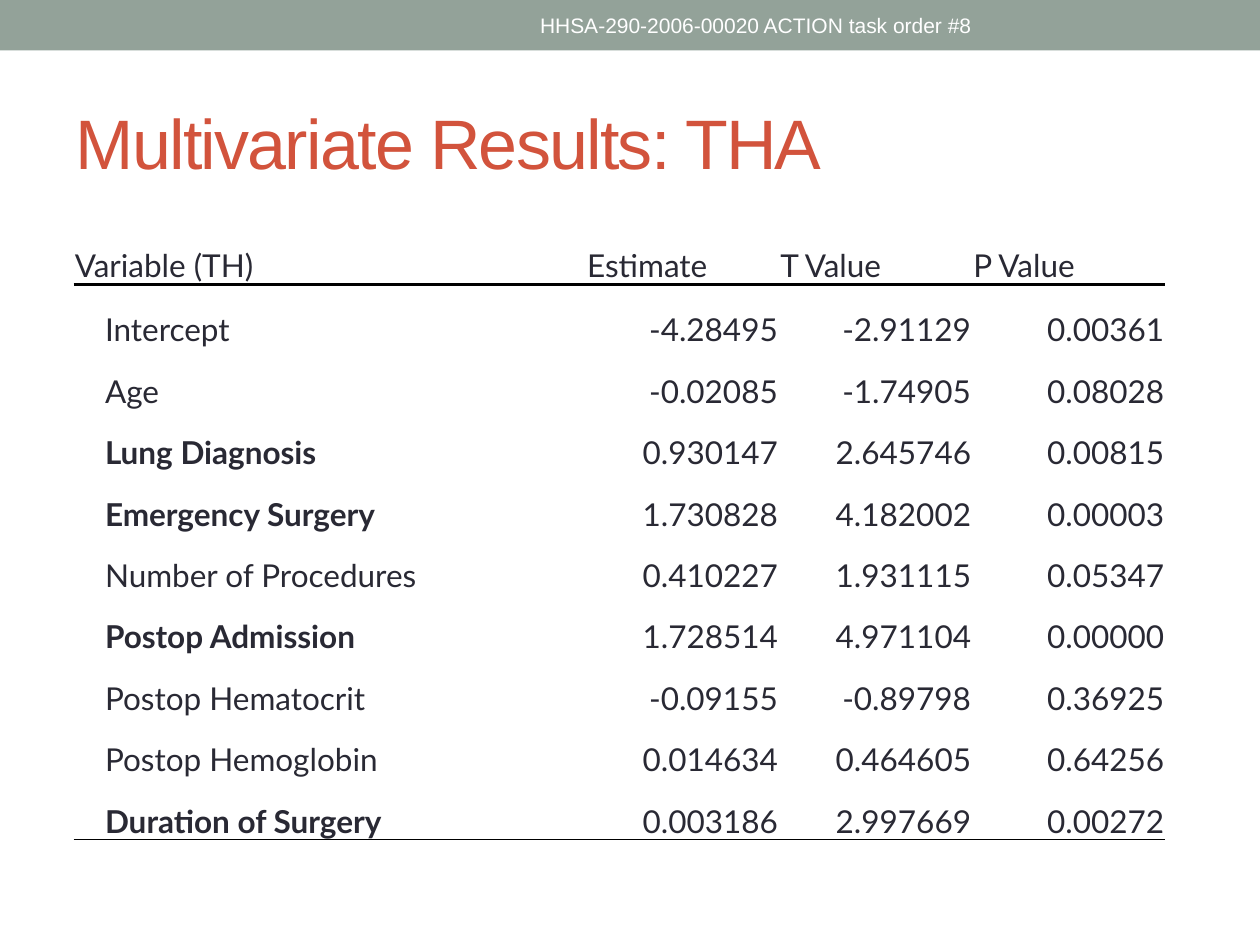
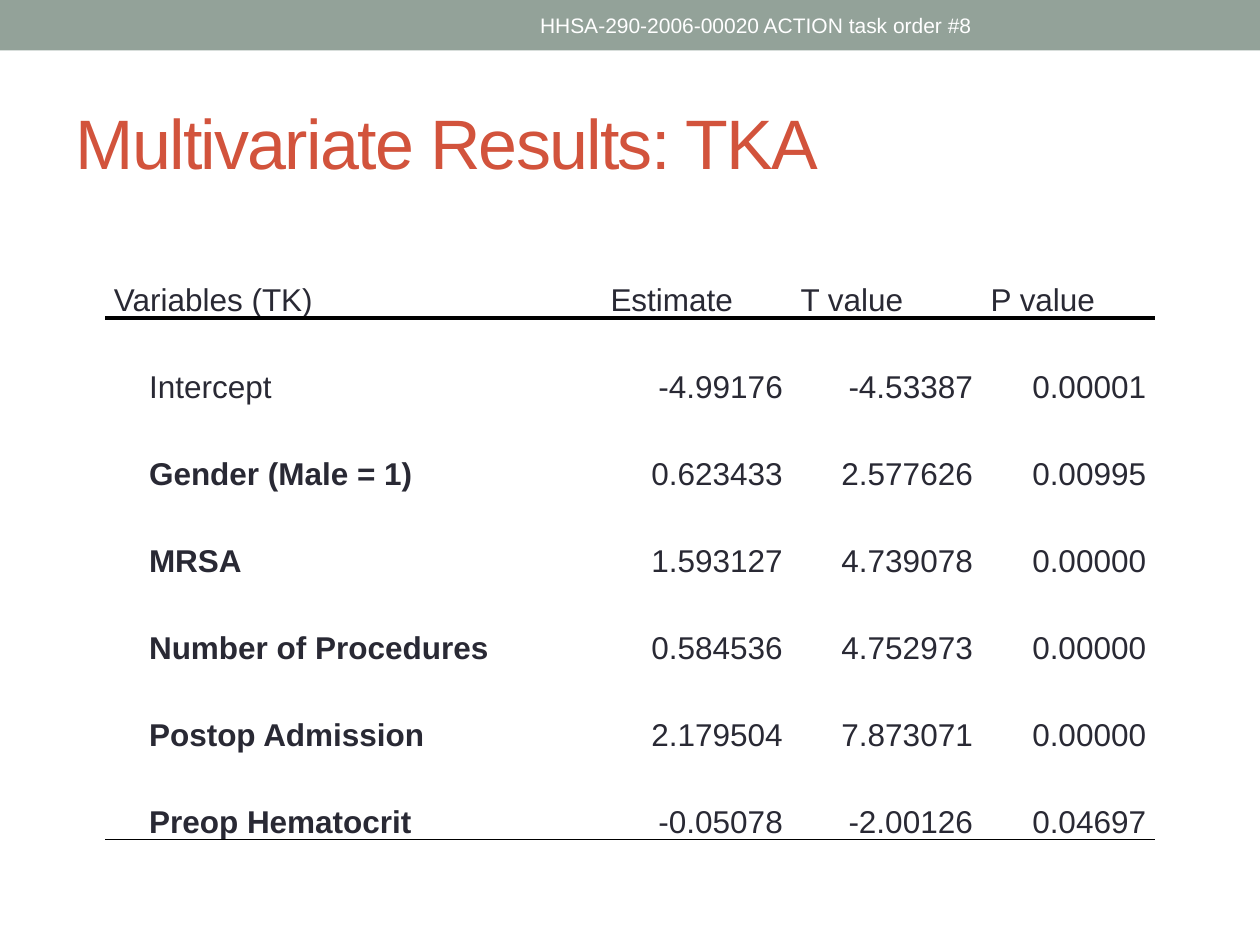
from lxml.etree import SubElement
from pptx import Presentation
from pptx.dml.color import RGBColor
from pptx.enum.shapes import MSO_SHAPE as Preset
from pptx.enum.text import MSO_ANCHOR as Anchor, MSO_AUTO_SIZE as AutoSize, PP_ALIGN as Align
from pptx.oxml.ns import qn
from pptx.util import Inches, Pt

# Grid: 120 columns by 90 rows over a 10 x 7.5 inch slide
WIDTH, HEIGHT = Inches(10), Inches(7.5)
COLUMNS, ROWS = 120, 90
TITLE_ONLY = 5

COLORS = {"band": "93A299", "title": "D2533C", "body": "292934",
          "rule": "000000", "note": "FFFFFF"}
TASK_ORDER = "HHSA-290-2006-00020 ACTION task order #8"

# Results: a bold variable name marks a significant predictor
THA = {
    "title": "Multivariate Results: THA",
    "header": ("Variable (TH)", "Estimate", "T Value", "P Value"),
    "results": [
        ("Intercept", "-4.28495", "-2.91129", "0.00361"),
        ("Age", "-0.02085", "-1.74905", "0.08028"),
        ("Lung Diagnosis", "0.930147", "2.645746", "0.00815"),
        ("Emergency Surgery", "1.730828", "4.182002", "0.00003"),
        ("Number of Procedures", "0.410227", "1.931115", "0.05347"),
        ("Postop Admission", "1.728514", "4.971104", "0.00000"),
        ("Postop Hematocrit", "-0.09155", "-0.89798", "0.36925"),
        ("Postop Hemoglobin", "0.014634", "0.464605", "0.64256"),
        ("Duration of Surgery", "0.003186", "2.997669", "0.00272"),
    ],
    "significant": {"Lung Diagnosis", "Emergency Surgery", "Postop Admission",
                    "Duration of Surgery"},
    "area": (7, 21, 104, 59),
    "widths": (48.8, 18.4, 18.4, 18.4),
    "heights": [6.1] * 2 + [5.85] * 8,
    "font": "Lato", "spacing": 1.0, "rules": (2, 0.5),
    "inset": 0.12, "top_inset": 0.12, "name_inset": 3, "name_indent": 0,
}
TKA = {
    "title": "Multivariate Results: TKA",
    "header": ("Variables (TK)", "Estimate", "T value", "P value"),
    "results": [
        ("Intercept", "-4.99176", "-4.53387", "0.00001"),
        ("Gender (Male = 1)", "0.623433", "2.577626", "0.00995"),
        ("MRSA", "1.593127", "4.739078", "0.00000"),
        ("Number of Procedures", "0.584536", "4.752973", "0.00000"),
        ("Postop Admission", "2.179504", "7.873071", "0.00000"),
        ("Preop Hematocrit", "-0.05078", "-2.00126", "0.04697"),
    ],
    "significant": {"Gender (Male = 1)", "MRSA", "Number of Procedures",
                    "Postop Admission", "Preop Hematocrit"},
    "area": (10, 22, 100, 58),
    "widths": (47.3, 18.1, 18.1, 16.5),
    "heights": [58 / 7] * 7,
    "font": "Arial", "spacing": 1.15, "rules": (2.25, 1),
    "inset": 0.85, "top_inset": 0, "name_inset": 0.85, "name_indent": 3.35,
}


def across(columns):
    return round(WIDTH * columns / COLUMNS)


def down(rows):
    return round(HEIGHT * rows / ROWS)


def box(left, top, width, height):
    return across(left), down(top), across(width), down(height)


def assign(target, values):
    for name, value in values.items():
        setattr(target, name, value)


class Deck:
    """Holds the shared style and the slide being built."""

    def __init__(self):
        self.show = Presentation()
        assign(self.show, {"slide_width": WIDTH, "slide_height": HEIGHT})
        self.slide = None

    def new_slide(self):
        self.slide = self.show.slides.add_slide(self.show.slide_layouts[TITLE_ONLY])

    def add_words(self, frame, words, color, font, align=Align.LEFT, spacing=1.0):
        line = frame.paragraphs[0]
        assign(line, {"alignment": align, "line_spacing": spacing})
        run = line.add_run()
        run.text = words
        assign(run.font, font)
        run.font.color.rgb = RGBColor.from_string(COLORS[color])
        return run

    def band(self):
        strip = self.slide.shapes.add_shape(Preset.RECTANGLE, *box(0, 0, COLUMNS, 4.8))
        strip.shadow.inherit = False
        strip.fill.solid()
        strip.fill.fore_color.rgb = RGBColor.from_string(COLORS["band"])
        strip.line.fill.background()

    def title(self, words):
        heading = self.slide.shapes.title
        assign(heading, dict(zip(("left", "top", "width", "height"), box(6, 7, 108, 13))))
        assign(heading.text_frame, {"vertical_anchor": Anchor.MIDDLE, "word_wrap": True,
                                    "auto_size": AutoSize.NONE})
        run = self.add_words(heading.text_frame, words, "title",
                             {"size": Pt(40), "name": "Arial"})
        run._r.get_or_add_rPr().set("spc", "-100")

    def task_order(self):
        note = self.slide.shapes.add_textbox(*box(45, 0.24, 54, 4.32))
        assign(note.text_frame, {"vertical_anchor": Anchor.MIDDLE, "word_wrap": True})
        self.add_words(note.text_frame, TASK_ORDER, "note",
                       {"size": Pt(12), "name": "Arial"}, Align.CENTER)

    def borders(self, cell, rules):
        """Draw the given sides in points and clear the others."""
        properties = cell._tc.get_or_add_tcPr()
        for side in ("lnL", "lnR", "lnT", "lnB"):
            edge = SubElement(properties, qn(f"a:{side}"))
            if side in rules:
                edge.set("w", str(Pt(rules[side])))
                fill = SubElement(edge, qn("a:solidFill"))
                SubElement(fill, qn("a:srgbClr")).set("val", COLORS["rule"])
            else:
                SubElement(edge, qn("a:noFill"))

    def results_table(self, study):
        lines = [study["header"], *study["results"]]
        grid = self.slide.shapes.add_table(len(lines), len(study["header"]),
                                           *box(*study["area"])).table
        assign(grid, {"first_row": False, "horz_banding": False})
        for column, width in zip(grid.columns, study["widths"]):
            column.width = across(width)
        for row, height in zip(grid.rows, study["heights"]):
            row.height = down(height)

        # Rules lie under the header and under the last result
        header_rule, closing_rule = study["rules"]
        rules = {0: {"lnB": header_rule}, 1: {"lnT": header_rule},
                 len(lines) - 1: {"lnB": closing_rule}}
        for r, line in enumerate(lines):
            for c, words in enumerate(line):
                cell = grid.cell(r, c)
                is_name = r > 0 and c == 0
                inset = study["name_inset" if is_name else "inset"]
                assign(cell, {"vertical_anchor": Anchor.BOTTOM,
                              "margin_left": across(inset),
                              "margin_right": across(study["inset"]),
                              "margin_top": down(study["top_inset"]),
                              "margin_bottom": 0})
                self.borders(cell, rules.get(r, {}))
                cell.fill.background()
                self.add_words(cell.text_frame, words, "body",
                               {"size": Pt(18), "name": study["font"],
                                "bold": is_name and words in study["significant"]},
                               Align.RIGHT if r and c else Align.LEFT, study["spacing"])
                if is_name and study["name_indent"]:
                    layout = cell.text_frame.paragraphs[0]._p.get_or_add_pPr()
                    layout.set("indent", str(across(study["name_indent"])))


def main():
    deck = Deck()
    for study in (THA, TKA):
        deck.new_slide()
        deck.band()
        deck.title(study["title"])
        deck.results_table(study)
        deck.task_order()
    deck.show.save("out.pptx")


if __name__ == "__main__":
    main()
